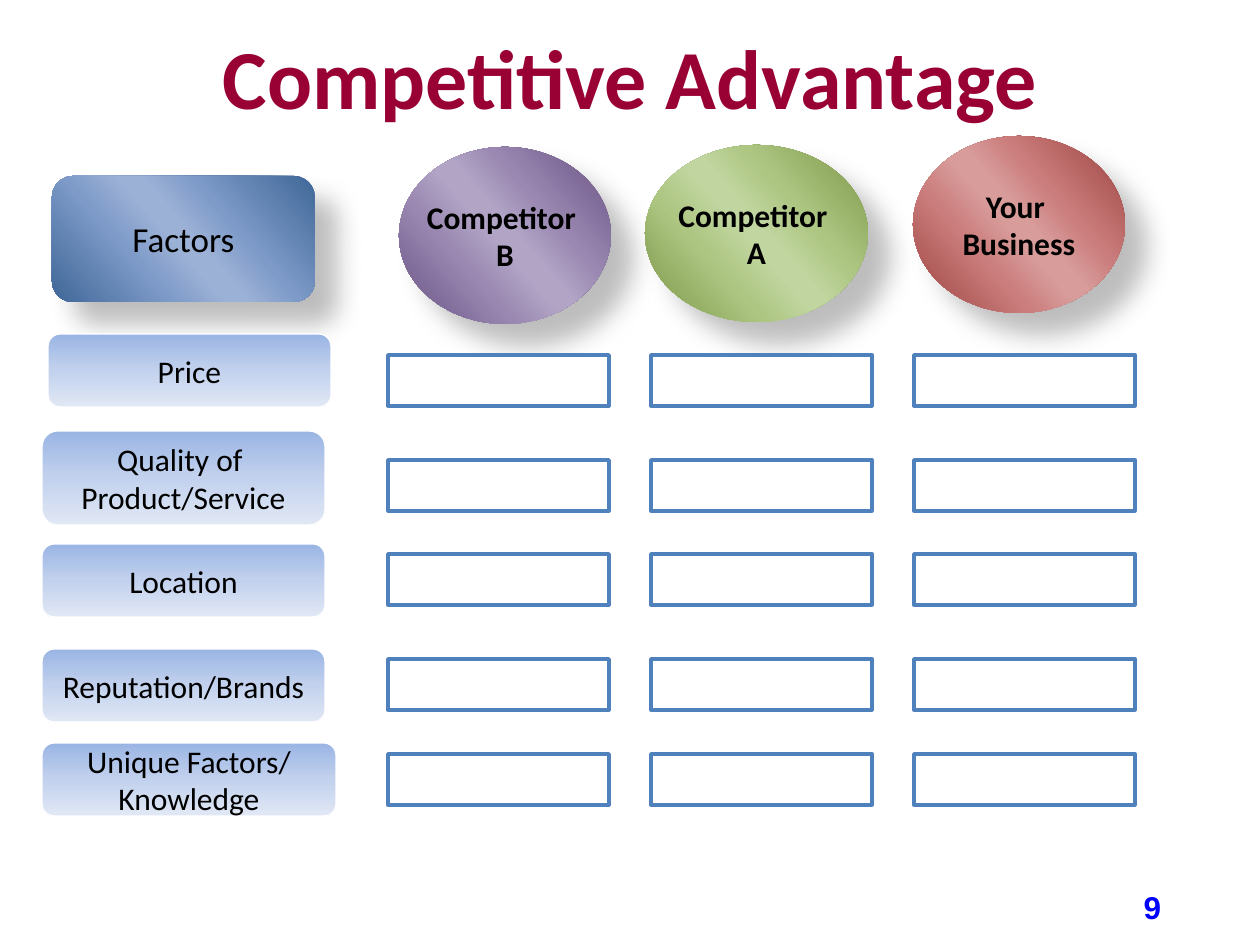
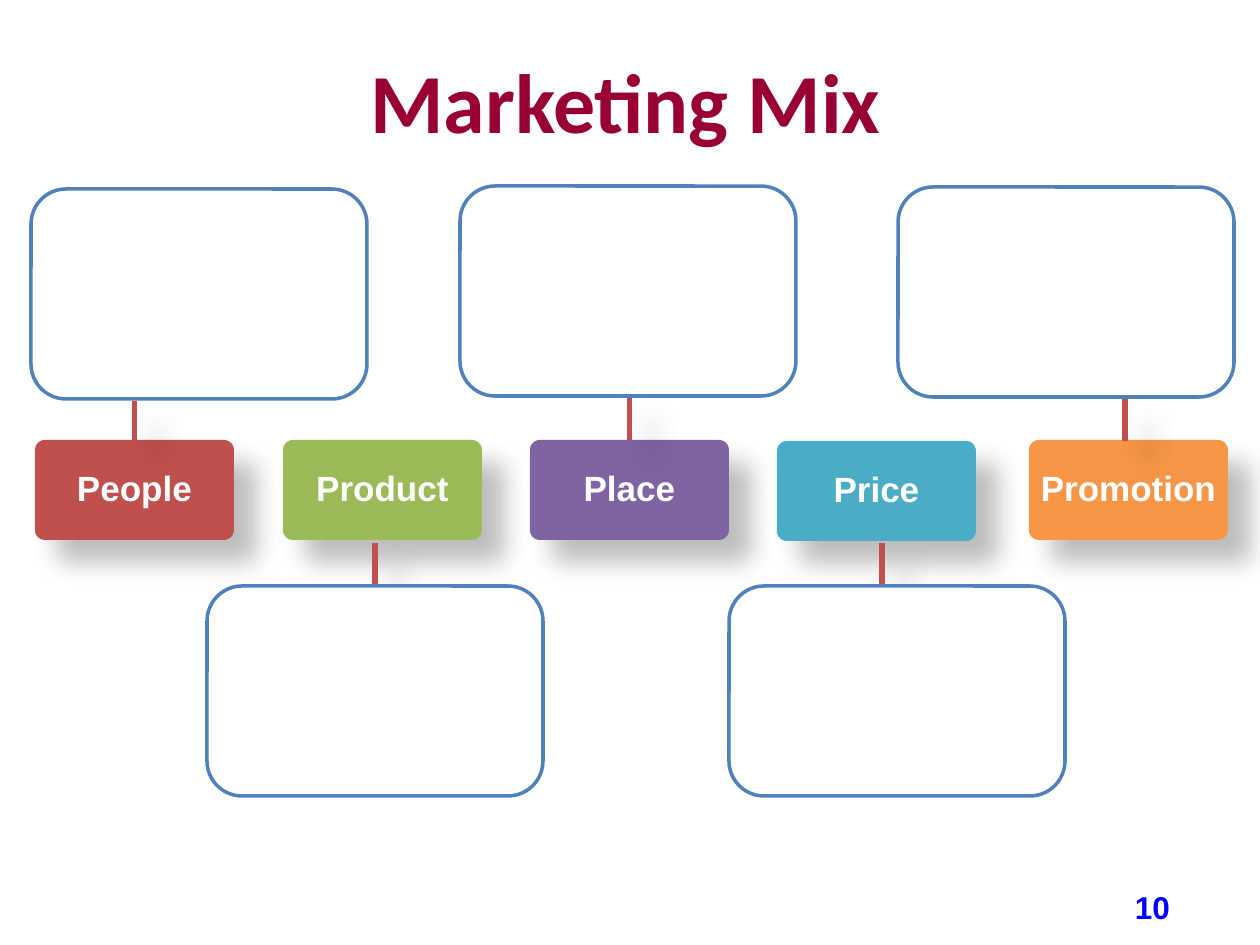
from dataclasses import dataclass

from lxml import etree
from pptx import Presentation
from pptx import util as u
from pptx.dml.color import RGBColor
from pptx.enum import shapes, text
from pptx.oxml.ns import qn

PX_PER_INCH = 126


@dataclass(frozen=True)
class Theme:
    heading_font: str = "Calibri"
    tag_font: str = "Arial"
    title_size: int = 48
    large_size: int = 20
    body_size: int = 18
    title: str = "990033"
    number: str = "0000FF"
    ink: str = "000000"
    paper: str = "FFFFFF"
    outline: str = "4F81BD"
    pointer: str = "C0504D"
    label_stops: tuple = ((0, "9AB5E4"), (50, "C2D1ED"), (100, "E1E8F5"))


THEME = Theme()
OVAL = shapes.MSO_SHAPE.OVAL
ROUND = shapes.MSO_SHAPE.ROUNDED_RECTANGLE
RECT = shapes.MSO_SHAPE.RECTANGLE
TOP_SITE = 0

# Competitive Advantage: frames are left, top, width, height in px
ADVANTAGE_TITLE = ("Competitive Advantage", (63, 21, 1134, 110))
# heading, outline, frame, (dark, middle, light), size, bold
HEADINGS = [
    ("Your \nBusiness", OVAL, (913, 136, 212, 177),
     ("9A403E", "CA7D7C", "D89C9B"), THEME.body_size, True),
    ("Competitor \nA", OVAL, (645, 145, 223, 177),
     ("7C9647", "ADC682", "C0D59F"), THEME.body_size, True),
    ("Competitor \nB", OVAL, (399, 147, 212, 177),
     ("675082", "9A88B2", "B1A4C5"), THEME.body_size, True),
    ("Factors", ROUND, (52, 176, 263, 126),
     ("3F6797", "7D9AC8", "9CB1D6"), THEME.large_size, False),
]
# factor, label frame, top of its answer boxes
FACTORS = [
    ("Price", (48, 334, 283, 73), 355),
    ("Quality of \nProduct/Service", (42, 431, 283, 94), 460),
    ("Location", (42, 544, 283, 73), 554),
    ("Reputation/Brands", (42, 649, 283, 73), 659),
    ("Unique Factors/\nKnowledge", (42, 743, 294, 73), 754),
]
ANSWER_LEFT, ANSWER_STEP, ANSWER_COUNT = 388, 263, 3
ANSWER_SIZE = (221, 51)

# Marketing Mix
MIX_TITLE = ("Marketing Mix ", (63, 32, 1144, 136))
TAG_SIZE = (199, 100)
NOTE_SIZE = (336, 210)
# tag, colour, tag corner, note corner, pointer (x, start y, end y), joined part
MIX = [
    ("People", "C0504D", (35, 440), (31, 189), (136, 440, 401), "tag"),
    ("Product", "9BBB59", (283, 440), (207, 586), (375, 586, 543), "note"),
    ("Place", "8064A2", (530, 440), (460, 186), (630, 440, 396), "tag"),
    ("Price", "4BACC6", (777, 441), (729, 586), (882, 585, 543), None),
    ("Promotion", "F79646", (1029, 440), (898, 187), (1125, 441, 399), None),
]

NUMBER_FRAME = (1126, 892, 53, 29)


def px(length):
    return u.Emu(round(length * 914400 / PX_PER_INCH))


def frame_of(frame):
    return [px(length) for length in frame]


def rgb(value):
    return RGBColor.from_string(value)


def write(box, words, font, size, color, bold=False, wrap=True):
    """Centre the words in a shape and format every run."""
    frame = box.text_frame
    frame.text = words
    frame.auto_size = text.MSO_AUTO_SIZE.NONE
    frame.word_wrap = wrap
    frame.vertical_anchor = text.MSO_ANCHOR.MIDDLE
    for para in frame.paragraphs:
        para.alignment = text.PP_ALIGN.CENTER
        for span in para.runs:
            span.font.name = font
            span.font.size = u.Pt(size)
            span.font.bold = bold
            span.font.color.rgb = rgb(color)


def set_effects(shape, shadow):
    """Replace the theme's effects by a soft shadow, or by nothing."""
    effects = etree.SubElement(shape._element.spPr, qn("a:effectLst"))
    if shadow:
        outer = etree.SubElement(
            effects, qn("a:outerShdw"), blurRad=str(u.Pt(15)), dist=str(u.Pt(18)),
            dir=str(45 * 60000), algn="tl", rotWithShape="0")
        color = etree.SubElement(outer, qn("a:srgbClr"), val=THEME.ink)
        etree.SubElement(color, qn("a:alpha"), val="26000")


def fill_gradient(shape, stops, clockwise):
    shape.fill.gradient()
    shape.fill.gradient_angle = 360 - clockwise
    stop_list = shape._element.spPr.find(".//" + qn("a:gsLst"))
    for old_stop in list(stop_list):
        stop_list.remove(old_stop)
    for position, color in stops:
        stop = etree.SubElement(stop_list, qn("a:gs"), pos=str(position * 1000))
        etree.SubElement(stop, qn("a:srgbClr"), val=color)


def add_block(page, kind, frame, fill, line=None, width=2, shadow=False,
              angle=90, corner=None):
    """Add a shape; fill is one colour or a tuple of gradient stops."""
    block = page.shapes.add_shape(kind, *frame_of(frame))
    if corner is not None:
        block.adjustments[0] = corner
    if isinstance(fill, str):
        block.fill.solid()
        block.fill.fore_color.rgb = rgb(fill)
    else:
        fill_gradient(block, fill, angle)
    if line:
        block.line.color.rgb = rgb(line)
        block.line.width = u.Pt(width)
    else:
        block.line.fill.background()
    set_effects(block, shadow)
    return block


def add_page(deck, title, number):
    words, frame = title
    page = deck.slides.add_slide(deck.slide_layouts[5])
    heading = page.shapes.title
    heading.left, heading.top, heading.width, heading.height = frame_of(frame)
    write(heading, words, THEME.heading_font, THEME.title_size, THEME.title, True)
    box = page.shapes.add_textbox(*frame_of(NUMBER_FRAME))
    box.text_frame.margin_left = box.text_frame.margin_right = 0
    write(box, str(number), THEME.tag_font, THEME.body_size, THEME.number, True)
    return page


def build_advantage(deck):
    page = add_page(deck, ADVANTAGE_TITLE, 9)
    for words, kind, frame, (dark, middle, light), size, bold in HEADINGS:
        sheen = ((0, dark), (33, middle), (47, light),
                 (53, light), (68, middle), (100, dark))
        block = add_block(page, kind, frame, sheen, shadow=True, angle=139)
        write(block, words, THEME.heading_font, size, THEME.ink, bold, wrap=False)
    for words, frame, answer_top in FACTORS:
        label = add_block(page, ROUND, frame, THEME.label_stops, THEME.paper, 0.75)
        write(label, words, THEME.heading_font, THEME.body_size, THEME.ink, wrap=False)
        for column in range(ANSWER_COUNT):
            left = ANSWER_LEFT + column * ANSWER_STEP
            add_block(page, RECT, (left, answer_top, *ANSWER_SIZE),
                      THEME.paper, THEME.outline)


def add_tag(page, words, color, corner):
    tag = add_block(page, ROUND, (*corner, *TAG_SIZE), color, shadow=True, corner=0.1)
    frame = tag.text_frame
    frame.margin_left = frame.margin_right = u.Inches(0.04)
    frame.margin_top = frame.margin_bottom = u.Inches(0.03)
    write(tag, words, THEME.tag_font, THEME.large_size, THEME.paper, True)
    frame.paragraphs[0].line_spacing = 0.9
    return tag


def add_pointer(page, x, start, end):
    pointer = page.shapes.add_connector(
        shapes.MSO_CONNECTOR.STRAIGHT, px(x), px(start), px(x), px(end))
    pointer.line.color.rgb = rgb(THEME.pointer)
    pointer.line.width = u.Pt(3)
    set_effects(pointer, shadow=True)
    return pointer


def build_mix(deck):
    page = add_page(deck, MIX_TITLE, 10)
    tags = [add_tag(page, words, color, corner) for words, color, corner, *_ in MIX]
    pointers = [add_pointer(page, *ends) for *_, ends, _ in MIX]
    for tag, pointer, (*_, corner, _, joined) in zip(tags, pointers, MIX):
        note = add_block(page, ROUND, (*corner, *NOTE_SIZE), THEME.paper, THEME.outline)
        if joined:
            pointer.begin_connect(tag if joined == "tag" else note, TOP_SITE)
            pointer.end_x = pointer.begin_x


def main():
    deck = Presentation()
    deck.slide_width, deck.slide_height = u.Inches(10), u.Inches(7.5)
    build_advantage(deck)
    build_mix(deck)
    deck.save("out.pptx")


if __name__ == "__main__":
    main()
